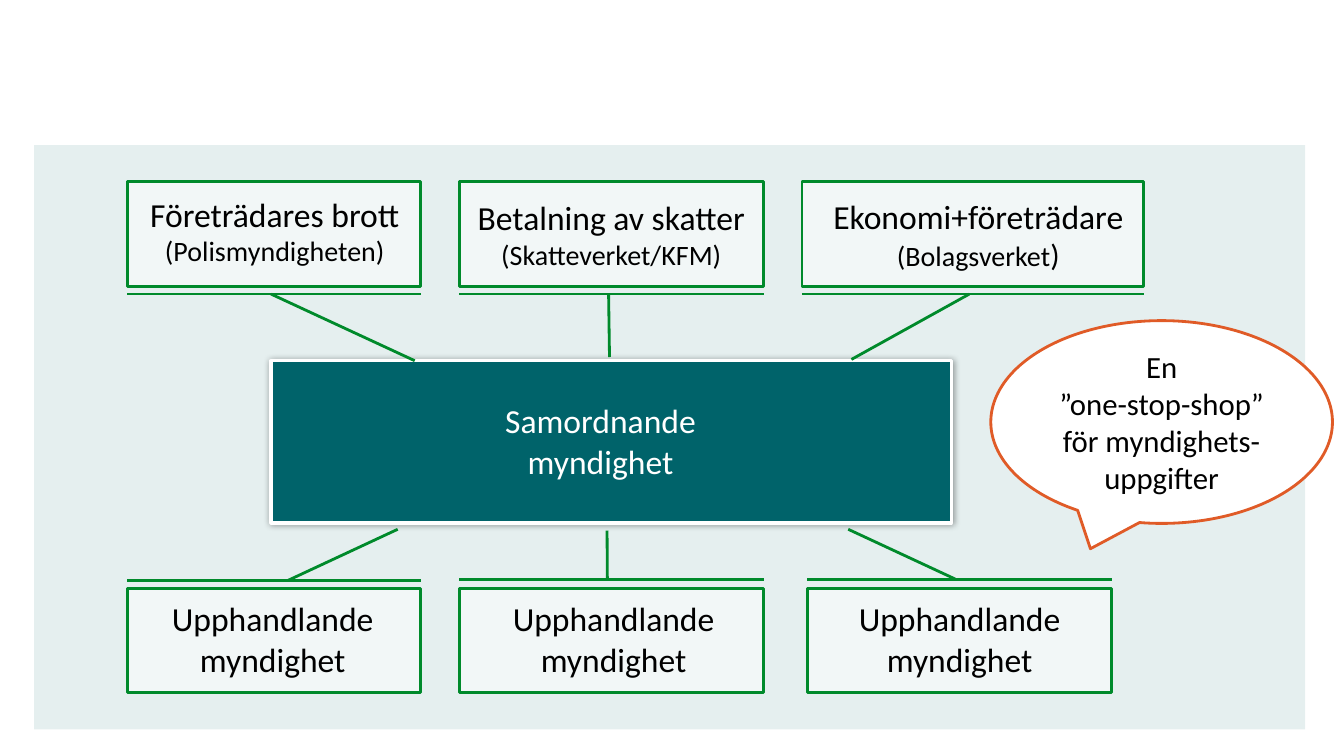
from lxml.etree import SubElement
from pptx import Presentation
from pptx.dml.color import RGBColor
from pptx.enum.shapes import MSO_SHAPE
from pptx.enum.text import MSO_ANCHOR, PP_ALIGN
from pptx.oxml.ns import qn
from pptx.util import Cm, Pt

COLOURS = {
    "teal": "00636A",
    "green": "008A2B",
    "orange": "E05B27",
    "white": "FFFFFF",
    "black": "000000",
}
FONT = "Calibri"
CALLOUT_HEIGHT = 2.64
CHECK_TOP = 4.58
BUYER_TOP = 14.82
CHECK_CALLOUTS = [
    (3.21, 7.39, (0.49, -0.072, 0.98, -0.708)),
    (11.58, 7.67, (0.49, -0.072, 0.493, -0.673)),
    (20.21, 8.61, (0.49, -0.072, 0.145, -0.696)),
]
BUYER_CALLOUTS = [
    (3.21, 7.39, (0.548, 1.074, 0.922, 1.562)),
    (11.58, 7.67, (0.486, 1.086, 0.485, 1.55)),
    (20.35, 7.67, (0.486, 1.086, 0.134, 1.562)),
]
CHECK_LABELS = [
    ((11.1, 4.67, 8.61, 2.46),
     [[("Betalning av skatter", 24)], [("(Skatteverket/KFM)", 20)]]),
    ((20.35, 4.62, 8.61, 2.57),
     [[("Ekonomi+företrädare", 24)], [("(Bolagsverket", 20), (")", 22)]]),
]
BUYER_LABELS = [(3.18, 7.39), (11.68, 7.57), (20.35, 7.67)]


def rgb(name):
    return RGBColor.from_string(COLOURS[name])


def add_figure(page, preset, frame, fill=None, opacity=100, line=None, weight=2):
    shape = page.shapes.add_shape(preset, *map(Cm, frame))
    shape.shadow.inherit = False
    if fill:
        shape.fill.solid()
        shape.fill.fore_color.rgb = rgb(fill)
        if opacity < 100:
            colour = shape.fill._xPr.find(qn("a:solidFill"))[0]
            SubElement(colour, qn("a:alpha"), val=str(opacity * 1000))
    else:
        shape.fill.background()
    if line:
        shape.line.color.rgb = rgb(line)
        shape.line.width = Pt(weight)
    else:
        shape.line.fill.background()
    return shape


def add_glow_shadow(shape):
    effects = shape._element.spPr.find(qn("a:effectLst"))
    shadow = SubElement(effects, qn("a:outerShdw"), blurRad=str(Pt(5)), dist="0", dir="0")
    colour = SubElement(shadow, qn("a:srgbClr"), val=COLOURS["black"])
    SubElement(colour, qn("a:alpha"), val="40000")


def add_callout(page, left, top, width, pointer):
    turned_left = left + (width - CALLOUT_HEIGHT) / 2
    turned_top = top + (CALLOUT_HEIGHT - width) / 2
    callout = add_figure(page, MSO_SHAPE.LINE_CALLOUT_1_BORDER_AND_ACCENT_BAR,
                         (turned_left, turned_top, CALLOUT_HEIGHT, width),
                         "white", 50, "green")
    callout.rotation = 270
    for index, value in enumerate(pointer):
        callout.adjustments[index] = value


def write(shape, lines, colour="black", anchor=MSO_ANCHOR.MIDDLE):
    frame = shape.text_frame
    frame.word_wrap = True
    frame.vertical_anchor = anchor
    for index, pieces in enumerate(lines):
        para = frame.add_paragraph() if index else frame.paragraphs[0]
        para.alignment = PP_ALIGN.CENTER
        para.font.name = FONT
        para.font.color.rgb = rgb(colour)
        para.font.size = Pt(pieces[0][1])
        for text, size in pieces:
            span = para.add_run()
            span.text = text
            if size != pieces[0][1]:
                span.font.size = Pt(size)


def add_label(page, frame, lines):
    write(add_figure(page, MSO_SHAPE.ROUNDED_RECTANGLE, frame), lines)


def add_text(page, frame, lines, colour="black"):
    box = page.shapes.add_textbox(*map(Cm, frame))
    write(box, lines, colour, MSO_ANCHOR.TOP)


def main():
    deck = Presentation()
    deck.slide_width, deck.slide_height = Cm(33.87), Cm(19.05)
    page = deck.slides.add_slide(deck.slide_layouts[6])

    add_figure(page, MSO_SHAPE.RECTANGLE, (0.86, 3.66, 32.03, 14.72), "teal", 10)
    hub = add_figure(page, MSO_SHAPE.RECTANGLE, (6.83, 9.09, 17.15, 4.09),
                     "teal", line="white", weight=2.25)
    add_glow_shadow(hub)
    add_text(page, (11.02, 9.96, 8.23, 2.31), [[("Samordnande myndighet", 24)]], "white")

    for top, callouts in ((CHECK_TOP, CHECK_CALLOUTS), (BUYER_TOP, BUYER_CALLOUTS)):
        for left, width, pointer in callouts:
            add_callout(page, left, top, width, pointer)

    bubble = add_figure(page, MSO_SHAPE.OVAL_CALLOUT, (24.97, 8.08, 8.61, 5.11),
                        "white", line="orange")
    write(bubble, [[("En", 22)], [("”one-stop-shop”", 22)],
                   [("för myndighets-uppgifter", 22)]])

    add_text(page, (3.23, 4.75, 7.39, 2.13),
             [[("Företrädares brott", 24)], [("(Polismyndigheten)", 20)]])
    for frame, lines in CHECK_LABELS:
        add_label(page, frame, lines)
    for left, width in BUYER_LABELS:
        add_label(page, (left, 14.81, width, 2.57), [[("Upphandlande myndighet", 24)]])

    deck.save("out.pptx")


if __name__ == "__main__":
    main()
